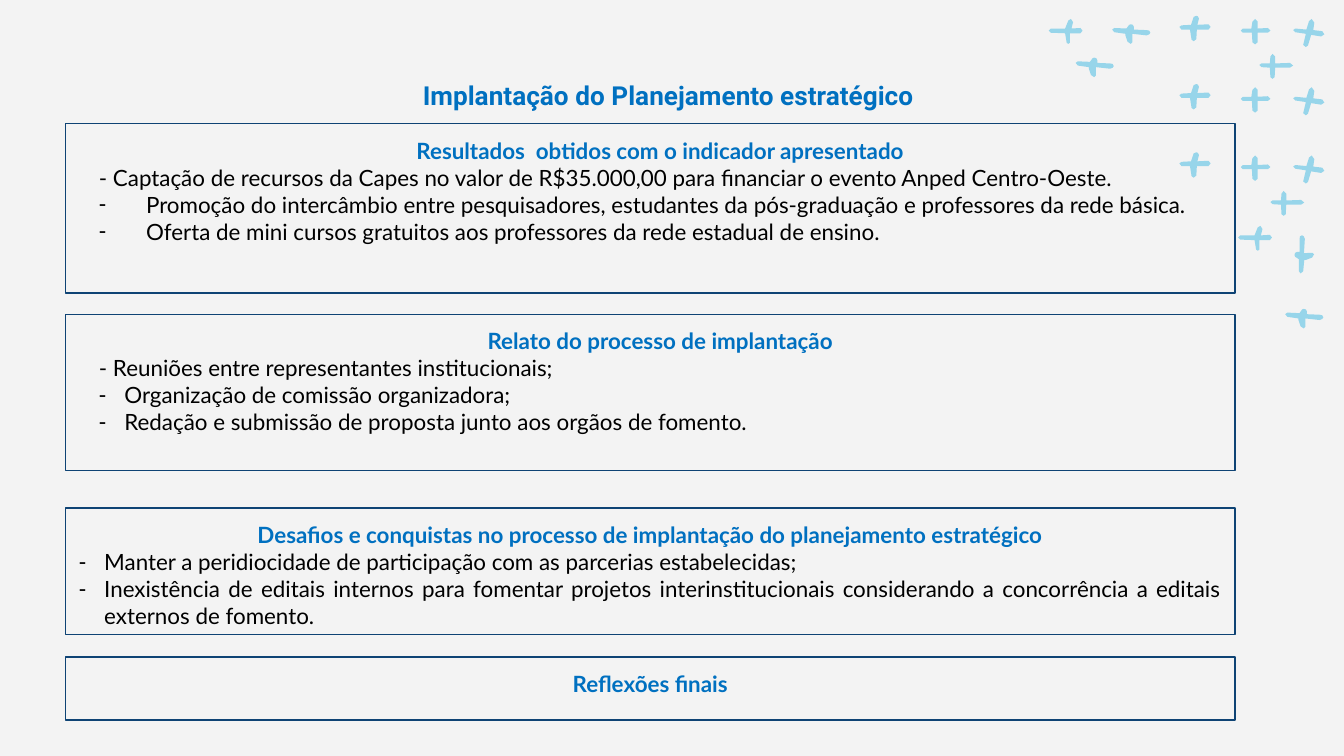
from lxml import etree
from pptx import Presentation
from pptx.dml.color import RGBColor
from pptx.enum.text import MSO_ANCHOR, MSO_AUTO_SIZE, PP_ALIGN
from pptx.oxml.ns import qn
from pptx.util import Cm, Pt

CENTER, JUSTIFY = PP_ALIGN.CENTER, PP_ALIGN.JUSTIFY
TOP, BOTTOM = MSO_ANCHOR.TOP, MSO_ANCHOR.BOTTOM
NO_AUTOFIT = MSO_AUTO_SIZE.NONE

COLORS = {
    "background": "F3F3F3",
    "heading": "0070C0",
    "body": "000000",
    "border": "0E4374",
    "cross": "97D5EA",
}
COMPARISON_LAYOUT = 4  # one title and four body placeholders
CARD_LEFT, CARD_WIDTH = 1.24, 22.1
INSET = Cm(0.25)
ROW_STEP = 1.29  # vertical distance between crosses of one column

# Cards: top and height, heading indent, then items as
# (text, left margin, first-line indent, bullet); lengths in cm
WIDE, NARROW, FLUSH = (1.27, -0.89), (0.86, -0.48), (0.48, -0.48)
CARDS = [
    (2.34, 3.2, WIDE, "Resultados  obtidos com o indicador apresentado", [
        ("- Captação de recursos da Capes no valor de R$35.000,00 para "
         "financiar o evento Anped Centro-Oeste.", WIDE, None),
        ("Promoção do intercâmbio entre pesquisadores, estudantes da "
         "pós-graduação e professores da rede básica.", WIDE, "-"),
        ("Oferta de mini cursos gratuitos aos professores da rede estadual "
         "de ensino.", WIDE, "-"),
    ]),
    (5.94, 2.95, WIDE, "Relato do processo de implantação", [
        ("- Reuniões entre representantes institucionais;", WIDE, None),
        ("Organização de comissão organizadora;", NARROW, "-"),
        ("Redação e submissão de proposta junto aos orgãos de fomento.",
         NARROW, "-"),
    ]),
    (9.6, 2.39, (0, 0), "Desafios e conquistas no processo de implantação do "
     "planejamento estratégico", [
        ("Manter a peridiocidade de participação com as parcerias "
         "estabelecidas;", FLUSH, "-"),
        ("Inexistência de editais internos para fomentar projetos "
         "interinstitucionais considerando a concorrência a editais externos "
         "de fomento.", FLUSH, "-"),
    ]),
    (12.42, 1.19, (0, 0), "Reflexões finais", []),
]

# Hand-drawn crosses: outline in tenths of a millimetre, then places in cm
CROSSES = [
    ([(36, 0), (33, 1), (28, 8), (5, 7), (1, 10), (5, 15), (26, 18), (26, 21),
      (30, 33), (36, 37), (39, 34), (39, 18), (66, 21), (71, 19), (73, 16),
      (71, 12), (66, 11), (42, 10), (42, 5), (40, 1)],
     [(21.01, 0.46), (20.32, 1.09), (24.28, 5.84), (24.28, 4.62, 267.3)]),
    ([(33, 0), (28, 2), (23, 17), (5, 18), (1, 21), (5, 26), (21, 26),
      (24, 45), (28, 48), (33, 44), (34, 26), (56, 26), (60, 21), (56, 16),
      (35, 17), (38, 5), (36, 1)],
     [(22.28, 0.3 + ROW_STEP * row) for row in range(3)]),
    ([(28, 0), (23, 5), (21, 18), (5, 18), (1, 22), (5, 26), (22, 26),
      (23, 44), (28, 48), (33, 44), (33, 26), (52, 26), (57, 22), (52, 17),
      (33, 18), (33, 5)],
     [(23.44, 0.36 + ROW_STEP * row) for row in range(3)]),
    ([(36, 0), (31, 4), (26, 20), (5, 18), (1, 21), (5, 25), (25, 28),
      (20, 49), (25, 53), (29, 50), (35, 30), (54, 33), (60, 29), (56, 23),
      (39, 21), (41, 7)],
     [(24.43, 0.36 + ROW_STEP * row) for row in range(3)]),
    ([(25, 0), (21, 5), (20, 18), (4, 18), (0, 21), (4, 25), (20, 26),
      (21, 44), (25, 47), (29, 44), (30, 26), (58, 26), (64, 22), (58, 17),
      (30, 18), (30, 5)],
     [(23.8, 1.02), (24.01, 3.61)]),
    ([(43, 0), (38, 3), (32, 18), (5, 18), (1, 22), (5, 26), (32, 27),
      (35, 45), (38, 47), (41, 45), (41, 27), (61, 27), (65, 22), (61, 17),
      (44, 18), (47, 6)],
     [(19.81, 0.36), (23.39, 4.27)]),
]


def color(name):
    return RGBColor.from_string(COLORS[name])


def place(placeholder, left, top, width, height, anchor):
    placeholder.left, placeholder.top = Cm(left), Cm(top)
    placeholder.width, placeholder.height = Cm(width), Cm(height)
    frame = placeholder.text_frame
    frame.word_wrap, frame.auto_size = True, NO_AUTOFIT
    frame.vertical_anchor = anchor
    frame.margin_left = frame.margin_right = INSET
    frame.margin_top = frame.margin_bottom = INSET
    return frame


def format_paragraph(paragraph, align, font, size, color_name, bold):
    paragraph.alignment = align
    paragraph.line_spacing = 1.0
    paragraph.space_before = paragraph.space_after = Pt(0)
    for run in paragraph.runs:
        run.font.name, run.font.size, run.font.bold = font, Pt(size), bold
        run.font.color.rgb = color(color_name)


def set_indent(paragraph, indent, bullet=None):
    margin, first_line = indent
    properties = paragraph._p.get_or_add_pPr()
    properties.set("marL", str(Cm(margin)))
    properties.set("indent", str(Cm(first_line)))
    if bullet:
        etree.SubElement(properties, qn("a:buChar"), char=bullet)
    else:
        etree.SubElement(properties, qn("a:buNone"))


def add_cross(slide, outline, left, top, rotation=0):
    builder = slide.shapes.build_freeform(*outline[0], scale=Cm(0.01))
    builder.add_line_segments(outline[1:], close=True)
    cross = builder.convert_to_shape()
    x_offset = min(x for x, _ in outline) / 100
    cross.left, cross.top = Cm(left + x_offset), Cm(top)
    cross.rotation = rotation
    cross.fill.solid()
    cross.fill.fore_color.rgb = color("cross")
    cross.line.fill.background()
    cross.shadow.inherit = False


def fill_title(title):
    frame = place(title, 6.99, 0.46, 11.28, 1.88, BOTTOM)
    frame.text = "Implantação do Planejamento estratégico"
    format_paragraph(frame.paragraphs[0], CENTER, "Roboto", 14, "heading", True)


def fill_card(card, top, height, heading_indent, heading, items):
    frame = place(card, CARD_LEFT, top, CARD_WIDTH, height, TOP)
    card.line.color.rgb = color("border")
    card.line.width = Pt(0.75)

    heading_line = frame.paragraphs[0]
    heading_line.text = heading
    format_paragraph(heading_line, CENTER, "Lato", 12, "heading", True)
    set_indent(heading_line, heading_indent)

    for text, indent, bullet in items:
        item = frame.add_paragraph()
        item.text = text
        format_paragraph(item, JUSTIFY, "Lato", 12, "body", False)
        set_indent(item, indent, bullet)


def main():
    presentation = Presentation()
    presentation.slide_width, presentation.slide_height = Cm(25.4), Cm(14.29)
    layout = presentation.slide_layouts[COMPARISON_LAYOUT]
    slide = presentation.slides.add_slide(layout)
    slide.background.fill.solid()
    slide.background.fill.fore_color.rgb = color("background")

    # Title and the four cards
    title, *cards = slide.placeholders
    fill_title(title)
    for card, content in zip(cards, CARDS):
        fill_card(card, *content)

    # Crosses in the upper right corner
    for outline, places in CROSSES:
        for position in places:
            add_cross(slide, outline, *position)

    presentation.save("out.pptx")


if __name__ == "__main__":
    main()
